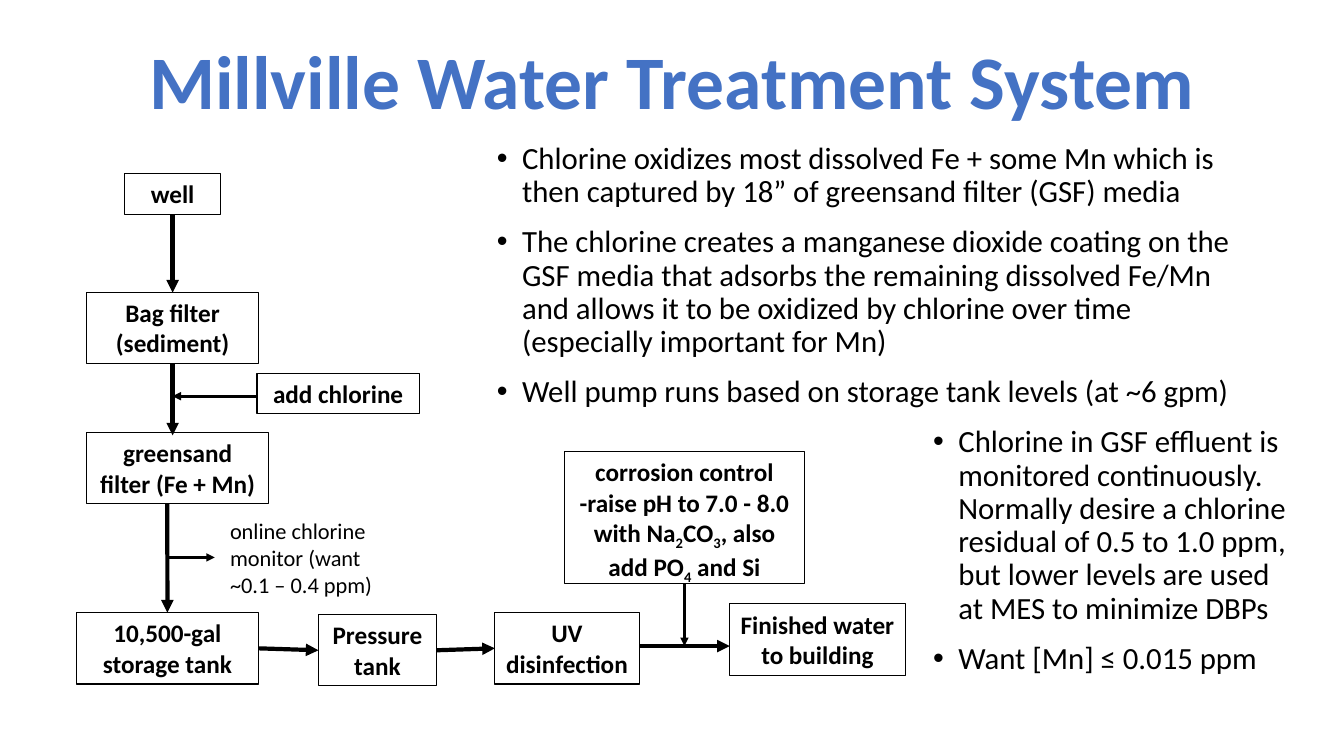
from dataclasses import dataclass

from lxml import etree
from pptx import Presentation
from pptx.dml.color import RGBColor
from pptx.enum.shapes import MSO_CONNECTOR, MSO_SHAPE
from pptx.enum.text import MSO_ANCHOR, MSO_AUTO_SIZE, PP_ALIGN
from pptx.oxml.ns import qn
from pptx.util import Pt

STRAIGHT = MSO_CONNECTOR.STRAIGHT
RECT = MSO_SHAPE.RECTANGLE
TOP, MIDDLE = MSO_ANCHOR.TOP, MSO_ANCHOR.MIDDLE
GROW, FIXED = MSO_AUTO_SIZE.SHAPE_TO_FIT_TEXT, MSO_AUTO_SIZE.NONE
LEFT, CENTER = PP_ALIGN.LEFT, PP_ALIGN.CENTER
SIDES = {"top": 0, "left": 1, "bottom": 2, "right": 3}


@dataclass(frozen=True)
class Theme:
    face: str = "Calibri"
    ink: RGBColor = RGBColor(0, 0, 0)
    blue: RGBColor = RGBColor(0x44, 0x72, 0xC4)
    title: float = 54
    body: float = 22
    label: float = 18
    note: float = 16
    border: float = 0.75
    thin: float = 2
    thick: float = 3
    indent: float = 18


THEME = Theme()


@dataclass(frozen=True)
class Style:
    font: dict
    para: dict
    frame: dict
    bullet: bool = False


def font_values(size: float, bold: bool = False, color: RGBColor = THEME.ink) -> dict:
    return {"name": THEME.face, "size": Pt(size), "bold": bold, "color": color}


TITLE = Style(font_values(THEME.title, True, THEME.blue),
              {"alignment": CENTER, "line_spacing": 0.9},
              {"vertical_anchor": MIDDLE, "auto_size": FIXED})
BODY = Style(font_values(THEME.body),
             {"alignment": LEFT, "line_spacing": 0.9, "space_before": Pt(12)},
             {"vertical_anchor": TOP, "auto_size": FIXED}, True)
LABEL = Style(font_values(THEME.label, True), {"alignment": CENTER},
              {"vertical_anchor": TOP, "auto_size": GROW})
NOTE = Style(font_values(THEME.note), {"alignment": LEFT},
             {"vertical_anchor": TOP, "auto_size": GROW})


@dataclass(frozen=True)
class Block:
    left: float
    top: float
    width: float
    height: float
    lines: tuple[str, ...]
    style: Style = LABEL


@dataclass(frozen=True)
class Arrow:
    start: tuple
    end: tuple
    weight: float = THEME.thick


TEXTS = (
    Block(89.28, 24.5, 781.2, 72, ("Millville Water Treatment System",), TITLE),
    Block(659.5, 301, 273.6, 197.3, (
        "Chlorine in GSF effluent is monitored continuously. Normally desire a chlorine "
        "residual of 0.5 to 1.0 ppm, but lower levels are used at MES to minimize DBPs",
        "Want [Mn] ≤ 0.015 ppm"), BODY),
    Block(347.8, 98.6, 539.3, 197.3, (
        "Chlorine oxidizes most dissolved Fe + some Mn which is then captured by 18” of "
        "greensand filter (GSF) media",
        "The chlorine creates a manganese dioxide coating on the GSF media that adsorbs the "
        "remaining dissolved Fe/Mn and allows it to be oxidized by chlorine over time "
        "(especially important for Mn)",
        "Well pump runs based on storage tank levels (at ~6 gpm)"), BODY),
    Block(157.2, 366, 118, 65.5, ("online chlorine monitor (want ~0.1 – 0.4 ppm)",), NOTE),
)

BOXES = {
    "well": Block(89.1, 124, 68.4, 29, ("well",)),
    "bag": Block(62, 209, 122.6, 51, ("Bag filter (sediment)",)),
    "sand": Block(62, 309, 129.8, 51, ("greensand filter (Fe + Mn)",)),
    "chlorine": Block(183.6, 266.6, 116, 29, ("add chlorine",)),
    "storage": Block(54.8, 437.6, 129.6, 51, ("10,500-gal storage tank",)),
    "pressure": Block(227.5, 439, 84.2, 51, ("Pressure tank",)),
    "lamp": Block(353.5, 437.6, 103, 51, ("UV", "disinfection")),
    "control": Block(403.2, 322.6, 171.4, 94.4, (
        "corrosion control -raise pH to 7.0 - 8.0 with Na_2_CO_3_, also add PO_4_ and Si",)),
    "finish": Block(521.3, 431.4, 125.3, 51, ("Finished water to building",)),
}

ARROWS = (
    Arrow(("well", "bottom"), ("bag", "top")),
    Arrow(("bag", "bottom"), (123.3, 311)),
    Arrow((183.6, 283), (123.3, 283), THEME.thin),
    Arrow((119.5, 360), ("storage", "top")),
    Arrow((118.8, 398.2), (153.4, 398.2), THEME.thin),
    Arrow(("storage", "right"), ("pressure", "left")),
    Arrow(("pressure", "right"), ("lamp", "left")),
    Arrow((456.5, 461.5), (521.3, 461.5)),
    Arrow(("control", "bottom"), (488.9, 461.5), THEME.thin),
)


def apply(target, values: dict) -> None:
    for name, value in values.items():
        if name == "color":
            target.color.rgb = value
        else:
            setattr(target, name, value)


def add_bullet(para) -> None:
    props = para._p.get_or_add_pPr()
    indent = Pt(THEME.indent)
    props.set("marL", str(indent))
    props.set("indent", str(-indent))
    etree.SubElement(props, qn("a:buFont")).set("typeface", "Arial")
    etree.SubElement(props, qn("a:buChar")).set("char", "•")


def fill_text(shape, block: Block) -> None:
    style = block.style
    frame = shape.text_frame
    apply(frame, {"word_wrap": True, **style.frame})
    for row, line in enumerate(block.lines):
        para = frame.add_paragraph() if row else frame.paragraphs[0]
        apply(para, style.para)
        if style.bullet:
            add_bullet(para)
        for part, text in enumerate(line.split("_")):
            run = para.add_run()
            run.text = text
            apply(run.font, style.font)
            if part % 2:
                run._r.get_or_add_rPr().set("baseline", "-25000")


def bounds(block: Block) -> tuple:
    return tuple(Pt(n) for n in (block.left, block.top, block.width, block.height))


def draw_text(slide, block: Block) -> None:
    fill_text(slide.shapes.add_textbox(*bounds(block)), block)


def draw_box(slide, block: Block):
    shape = slide.shapes.add_shape(RECT, *bounds(block))
    shape.shadow.inherit = False
    shape.fill.background()
    apply(shape.line, {"color": THEME.ink, "width": Pt(THEME.border)})
    fill_text(shape, block)
    return shape


def draw_arrow(slide, arrow: Arrow, boxes: dict) -> None:
    ends = (arrow.start, arrow.end)
    points = [(0, 0) if end[0] in boxes else end for end in ends]
    line = slide.shapes.add_connector(STRAIGHT, *(Pt(n) for point in points for n in point))
    for end, join in zip(ends, (line.begin_connect, line.end_connect)):
        if end[0] in boxes:
            join(boxes[end[0]], SIDES[end[1]])
    apply(line.line, {"color": THEME.ink, "width": Pt(arrow.weight)})
    etree.SubElement(line.line._get_or_add_ln(), qn("a:tailEnd")).set("type", "triangle")
    etree.SubElement(line._element.spPr, qn("a:effectLst"))


def main() -> None:
    deck = Presentation()
    apply(deck, {"slide_width": Pt(960), "slide_height": Pt(540)})
    slide = deck.slides.add_slide(deck.slide_layouts[6])
    for block in TEXTS:
        draw_text(slide, block)
    boxes = {name: draw_box(slide, block) for name, block in BOXES.items()}
    for arrow in ARROWS:
        draw_arrow(slide, arrow, boxes)
    deck.save("out.pptx")


if __name__ == "__main__":
    main()
